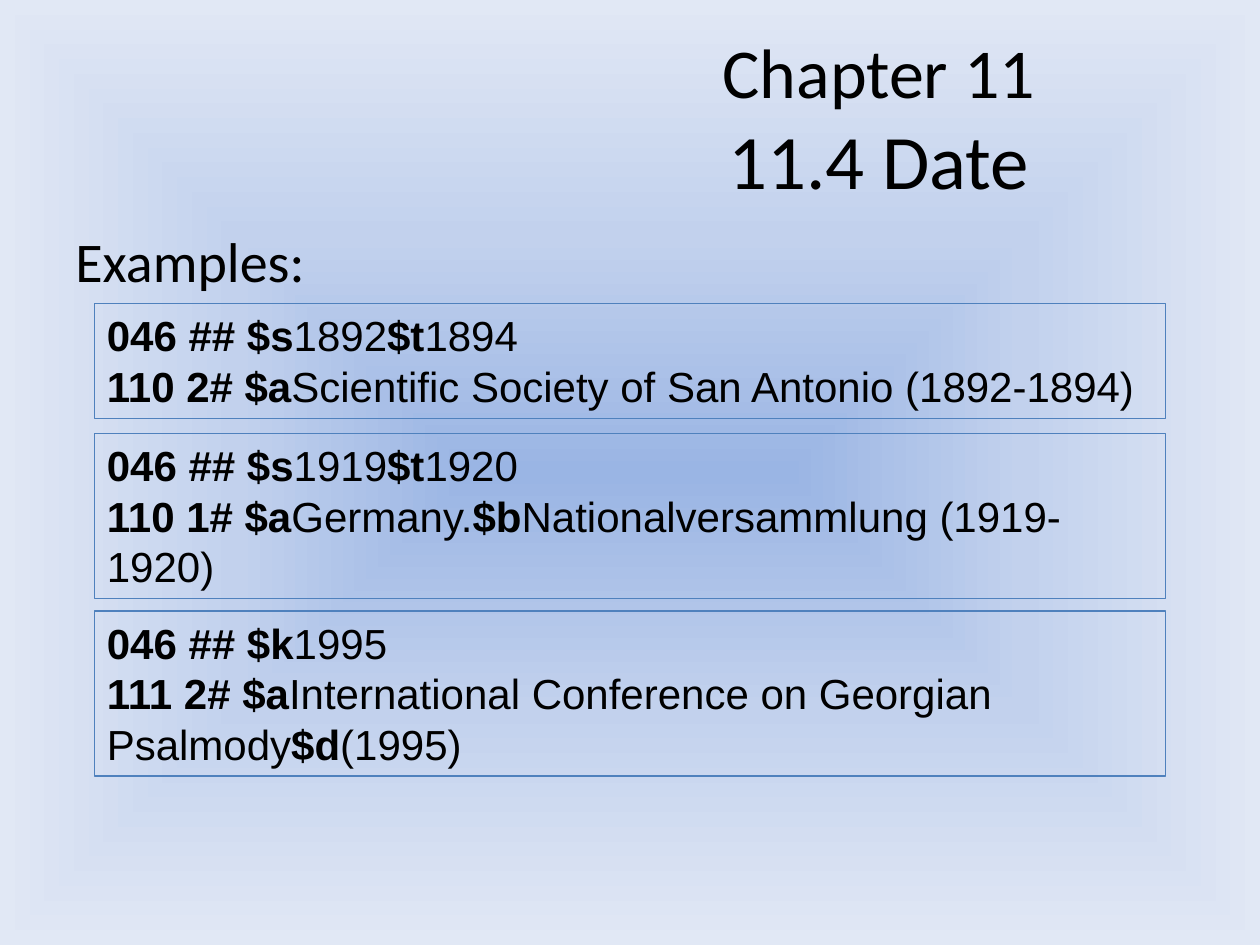
from dataclasses import dataclass

from lxml import etree
from pptx import Presentation
from pptx.dml.color import RGBColor
from pptx.enum.shapes import MSO_SHAPE
from pptx.enum.text import MSO_ANCHOR, MSO_AUTO_SIZE, PP_ALIGN
from pptx.oxml.ns import qn
from pptx.util import Inches, Pt

RECT = MSO_SHAPE.RECTANGLE
TOP, MIDDLE = MSO_ANCHOR.TOP, MSO_ANCHOR.MIDDLE
LEFT, CENTER = PP_ALIGN.LEFT, PP_ALIGN.CENTER
GROW = MSO_AUTO_SIZE.SHAPE_TO_FIT_TEXT

COLORS = {
    "text": "000000",
    "border": "4F81BD",
    "center": "9AB5E4",
    "middle": "C2D1ED",
    "edge": "E1E8F5",
}
BACKGROUND_STOPS = [(0, "center"), (50, "middle"), (100, "edge")]


@dataclass
class Example:
    """A catalogue record; each line alternates bold codes and plain values."""
    top: float
    height: float
    lines: list[list[str]]


EXAMPLES = [
    Example(2.41, 0.91, [
        ["046 ## $s", "1892", "$t", "1894"],
        ["110 2# $a", "Scientific Society of San Antonio (1892-1894)"],
    ]),
    Example(3.44, 1.31, [
        ["046 ## $s", "1919", "$t", "1920"],
        ["110 1# $a", "Germany.", "$b", "Nationalversammlung (1919-1920)"],
    ]),
    Example(4.85, 1.31, [
        ["046 ## $k", "1995"],
        ["111 2# $a", "International Conference on Georgian Psalmody", "$d", "(1995)"],
    ]),
]


def set_background(s) -> None:
    """Fill the slide with a rectangular gradient spreading from its centre."""
    fill = s.background.fill
    fill.solid()
    solid = next(s.element.iter(qn("a:solidFill")))
    grad = etree.Element(qn("a:gradFill"), rotWithShape="1")
    stops = etree.SubElement(grad, qn("a:gsLst"))
    for percent, name in BACKGROUND_STOPS:
        stop = etree.SubElement(stops, qn("a:gs"), pos=str(percent * 1000))
        etree.SubElement(stop, qn("a:srgbClr"), val=COLORS[name])
    shape = etree.SubElement(grad, qn("a:path"), path="shape")
    etree.SubElement(shape, qn("a:fillToRect"), l="50000", t="50000", r="50000", b="50000")
    solid.getparent().replace(solid, grad)


def add_run(p, text: str, *, size: float, font: str = "Calibri", bold: bool = False) -> None:
    r = p.add_run()
    r.text = text
    r.font.name = font
    r.font.size = Pt(size)
    r.font.bold = bold
    r.font.color.rgb = RGBColor.from_string(COLORS["text"])


def add_text_box(s, left: float, top: float, width: float, height: float, anchor=TOP):
    sp = s.shapes.add_textbox(Inches(left), Inches(top), Inches(width), Inches(height))
    tf = sp.text_frame
    tf.word_wrap = True
    tf.vertical_anchor = anchor
    return tf


def add_example(s, example: Example) -> None:
    sp = s.shapes.add_shape(RECT, Inches(0.75), Inches(example.top),
                            Inches(8.5), Inches(example.height))
    sp.shadow.inherit = False
    sp.fill.background()
    sp.line.color.rgb = RGBColor.from_string(COLORS["border"])
    sp.line.width = Pt(0.75)
    tf = sp.text_frame
    tf.word_wrap = True
    tf.auto_size = GROW
    tf.vertical_anchor = TOP
    for i, line in enumerate(example.lines):
        p = tf.add_paragraph() if i else tf.paragraphs[0]
        p.alignment = LEFT
        for j, text in enumerate(line):
            add_run(p, text, size=24, font="Arial", bold=j % 2 == 0)


def main() -> None:
    prs = Presentation()
    prs.slide_width, prs.slide_height = Inches(10), Inches(7.5)
    s = prs.slides.add_slide(prs.slide_layouts[6])
    set_background(s)

    p = add_text_box(s, 4.45, 0.3, 5.05, 1.25, MIDDLE).paragraphs[0]
    p.alignment = CENTER
    add_run(p, "Chapter 11", size=40)
    p.add_line_break()
    add_run(p, "11.4 Date", size=44)

    p = add_text_box(s, 0.5, 1.75, 9, 4.95).paragraphs[0]
    add_run(p, "Examples:", size=32)

    for example in EXAMPLES:
        add_example(s, example)

    prs.save("out.pptx")


if __name__ == "__main__":
    main()
